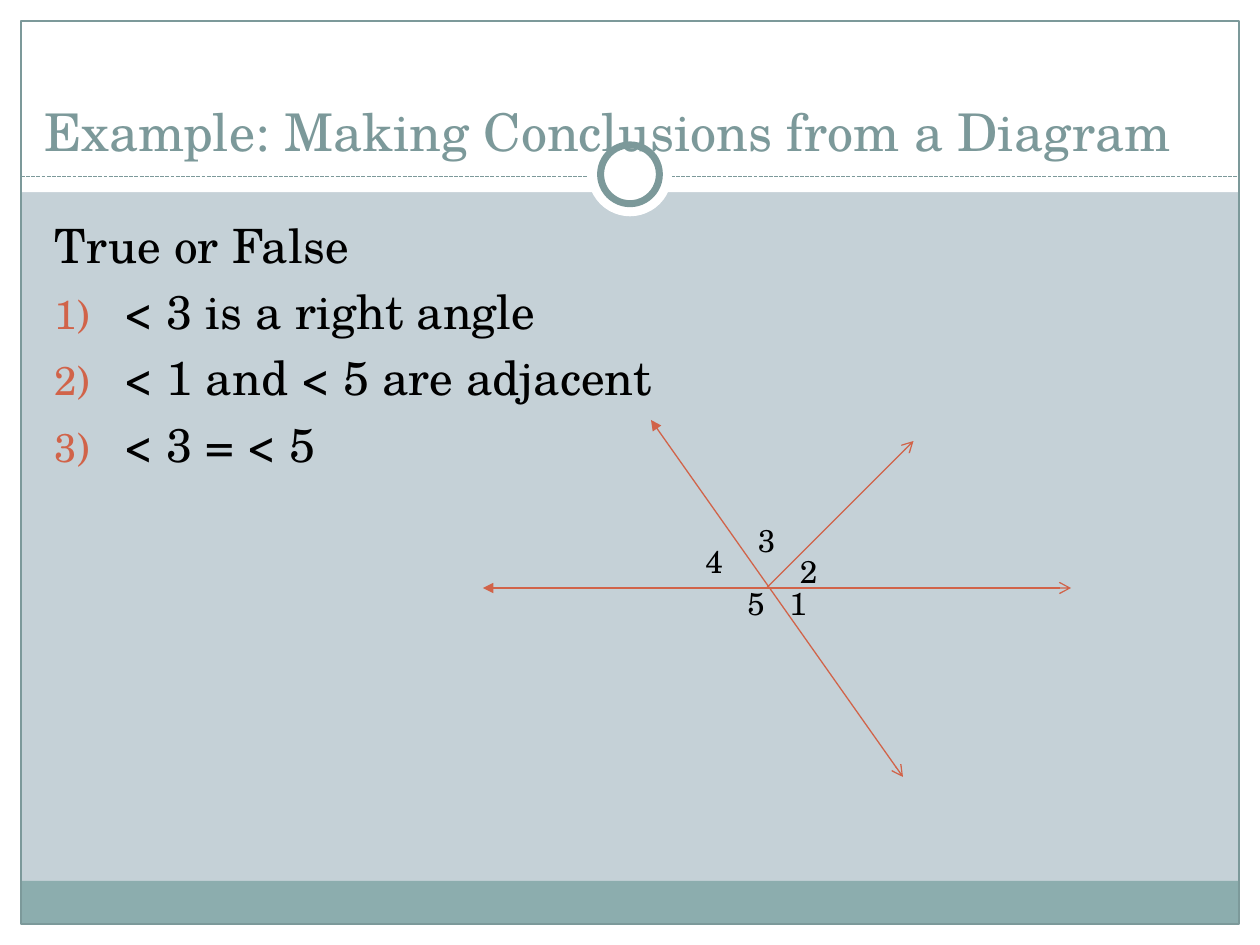
import pptx
import pptx.dml.color
import pptx.enum.dml
import pptx.enum.shapes
import pptx.enum.text
import pptx.oxml
import pptx.oxml.ns
import pptx.util

PX = 7620  # EMU per px: 120 px to the inch
WIDTH, HEIGHT = 1200, 900
MARGIN = 20
FONT = "TeX Gyre Schola"
COLORS = {
    "background": "C5D1D7",
    "white": "FFFFFF",
    "band": "8CADAE",
    "frame": "7C999A",
    "accent": "D16349",
    "text": "000000",
}
SHAPES = pptx.enum.shapes.MSO_SHAPE
ANCHORS = pptx.enum.text.MSO_ANCHOR


def emu(*lengths):
    return [pptx.util.Emu(length * PX) for length in lengths]


def rgb(name):
    return pptx.dml.color.RGBColor.from_string(COLORS[name])


def add_xml(parent, xml):
    ns = pptx.oxml.ns.nsdecls("a")
    parent.append(pptx.oxml.parse_xml(xml.replace("/>", f" {ns}/>", 1)
                                      if xml.endswith("/>") and xml.count("<") == 1
                                      else xml.replace(">", f" {ns}>", 1)))


class SlideBuilder:
    def __init__(self, prs):
        self.slide = prs.slides.add_slide(prs.slide_layouts[5])
        self.shapes = self.slide.shapes
        fill = self.slide.background.fill
        fill.solid()
        fill.fore_color.rgb = rgb("background")

    def shape(self, kind, box, fill=None, line=None, width=0.75):
        sp = self.shapes.add_shape(kind, *emu(*box))
        sp.shadow.inherit = False
        if fill:
            sp.fill.solid()
            sp.fill.fore_color.rgb = rgb(fill)
        else:
            sp.fill.background()
        if line:
            sp.line.color.rgb = rgb(line)
            sp.line.width = pptx.util.Pt(width)
        else:
            sp.line.fill.background()

    def line(self, start, end, color, head=None, tail=None, dash=None):
        cxn = self.shapes.add_connector(
            pptx.enum.shapes.MSO_CONNECTOR.STRAIGHT, *emu(*start, *end))
        cxn.line.color.rgb = rgb(color)
        cxn.line.width = pptx.util.Pt(0.75)
        if dash:
            cxn.line.dash_style = dash
        ln = cxn.line._get_or_add_ln()
        for tag, arrow in (("headEnd", head), ("tailEnd", tail)):
            if arrow:
                add_xml(ln, f'<a:{tag} type="{arrow}"/>')
        add_xml(cxn._element.spPr, "<a:effectLst/>")

    def paragraph(self, p, text, size, color="text", before=0):
        p.text = text
        p.alignment = pptx.enum.text.PP_ALIGN.LEFT
        p.space_before = pptx.util.Pt(before)
        p.font.name = FONT
        p.font.size = pptx.util.Pt(size)
        p.font.color.rgb = rgb(color)

    def number(self, p, indent):
        """Give the paragraph a coloured automatic number such as 1)."""
        pPr = p._p.get_or_add_pPr()
        pPr.set("marL", str(indent * PX))
        pPr.set("indent", str(-indent * PX))
        add_xml(pPr, f'<a:buClr><a:srgbClr val="{COLORS["accent"]}"/></a:buClr>')
        add_xml(pPr, '<a:buSzPct val="85000"/>')
        add_xml(pPr, f'<a:buFont typeface="{FONT}"/>')
        add_xml(pPr, '<a:buAutoNum type="arabicParenR"/>')

    def title(self, box, text, size):
        sp = self.shapes.title
        self.shapes._spTree.append(sp._element)  # in front of the frame
        sp.left, sp.top, sp.width, sp.height = emu(*box)
        tf = sp.text_frame
        tf.auto_size = pptx.enum.text.MSO_AUTO_SIZE.NONE
        tf.vertical_anchor = ANCHORS.BOTTOM
        self.paragraph(tf.paragraphs[0], text, size, "frame")

    def text(self, box, lines, size, before=0, indent=0):
        """Add a text box; with an indent, lines after the first are numbered."""
        tf = self.shapes.add_textbox(*emu(*box)).text_frame
        tf.word_wrap = True
        tf.vertical_anchor = ANCHORS.TOP
        for i, line in enumerate(lines):
            p = tf.add_paragraph() if i else tf.paragraphs[0]
            if i and indent:
                self.number(p, indent)
            self.paragraph(p, line, size, before=before)


def add_frame(builder):
    for box in (
        (0, HEIGHT - MARGIN, WIDTH, MARGIN),
        (0, 0, WIDTH, 183),
        (0, 0, MARGIN, HEIGHT),
        (WIDTH - MARGIN, 0, MARGIN, HEIGHT),
    ):
        builder.shape(SHAPES.RECTANGLE, box, "white")
    inner = WIDTH - 2 * MARGIN
    builder.shape(SHAPES.RECTANGLE, (MARGIN, 839, inner, 41), "band")
    builder.shape(SHAPES.RECTANGLE,
                  (MARGIN, MARGIN, inner, HEIGHT - 2 * MARGIN), line="frame")
    builder.line((MARGIN, 168), (WIDTH - MARGIN, 168), "frame",
                 dash=pptx.enum.dml.MSO_LINE.SQUARE_DOT)
    builder.shape(SHAPES.OVAL, (560, 126, 80, 80), "white")
    builder.shape(SHAPES.OVAL, (572, 138, 56, 56), "white", "frame", 4)


def add_angle_diagram(builder):
    for start, end, head in (
        ((460, 560), (1020, 560), "triangle"),
        ((730, 560), (870, 420), None),
        ((620, 400), (860, 740), "triangle"),
    ):
        builder.line(start, end, "accent", head, "arrow")
    label_corners = ((740, 550), (750, 520), (710, 490), (660, 510), (700, 550))
    for number, corner in enumerate(label_corners, 1):
        builder.text((*corner, 70, 50), [str(number)], 18)


def main():
    prs = pptx.Presentation()
    prs.slide_width, prs.slide_height = emu(WIDTH, HEIGHT)
    builder = SlideBuilder(prs)
    add_frame(builder)
    builder.title((30, 60, 1120, 100),
                  "Example: Making Conclusions from a Diagram", 29.7)
    builder.text(
        (40, 200, 1116, 600),
        ["True or False", "< 3 is a right angle",
         "< 1 and < 5 are adjacent", "< 3 = < 5"],
        27, before=5.4, indent=67)
    add_angle_diagram(builder)
    prs.save("out.pptx")


if __name__ == "__main__":
    main()
